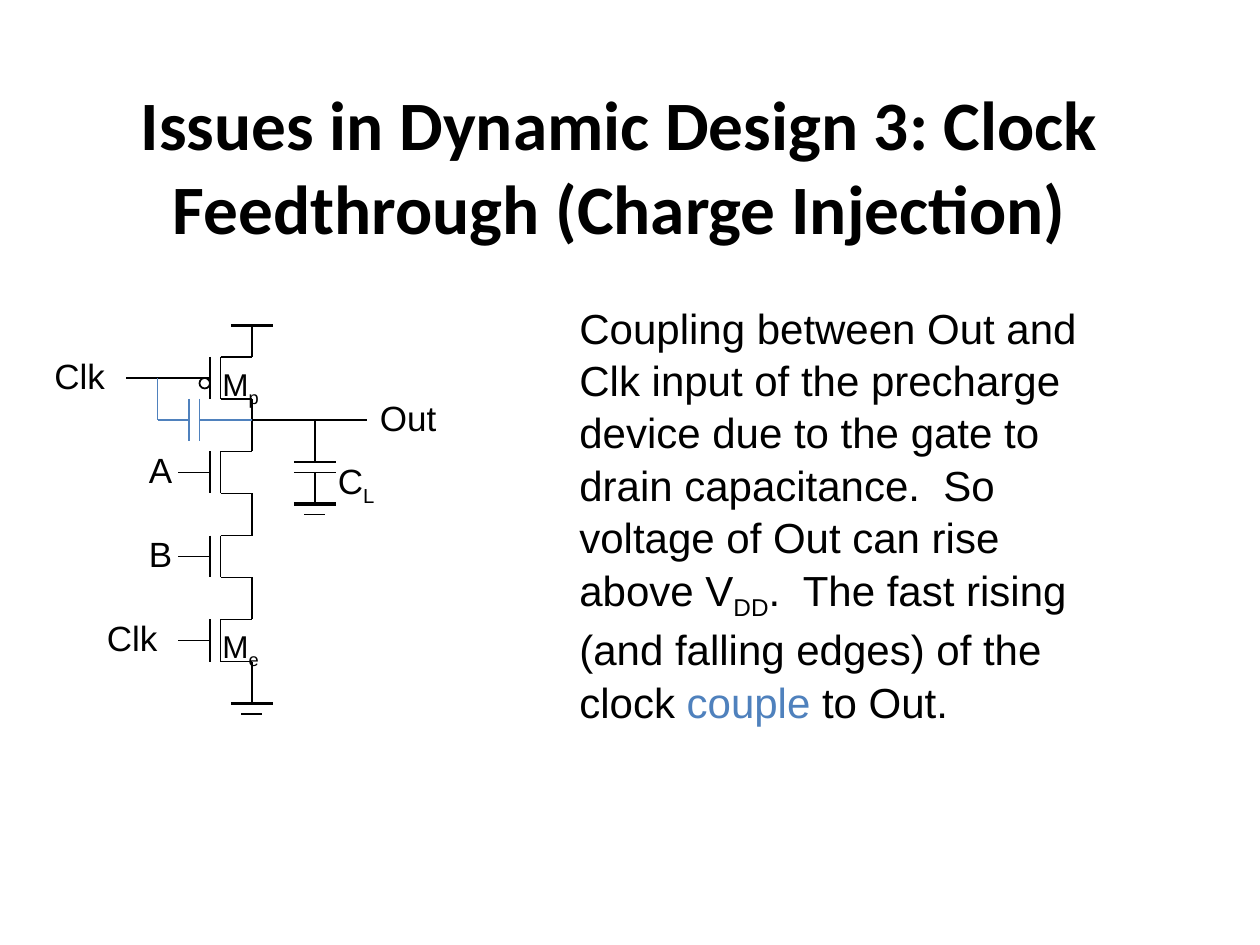
from dataclasses import dataclass

from lxml.etree import SubElement
from pptx import Presentation
from pptx.dml.color import RGBColor
from pptx.enum.shapes import MSO_CONNECTOR, MSO_SHAPE
from pptx.enum.text import MSO_ANCHOR, MSO_AUTO_SIZE, PP_ALIGN
from pptx.oxml.ns import qn
from pptx.util import Cm, Pt


@dataclass(frozen=True)
class Theme:
    ink: RGBColor = RGBColor(0x00, 0x00, 0x00)
    accent: RGBColor = RGBColor(0x4F, 0x81, 0xBD)
    title_font: str = "Calibri"
    text_font: str = "Arial"
    title_size: float = 39.6
    body_size: float = 24
    label_size: float = 20
    device_size: float = 18
    thin: float = 1
    heavy: float = 2.25
    line_spacing: float = 1.04


@dataclass(frozen=True)
class Box:
    left: float
    top: float
    width: float
    height: float

    def inner(self, left, top, width, height):
        return Box(self.left + left, self.top + top, width, height)


THEME = Theme()
GRID = 2.54 / 12  # centimetres in one step of the drawing grid


def grid(steps):
    return Cm(steps * GRID)


def add_wire(shapes, box, start, end, color=THEME.ink, weight=THEME.thin):
    """Draw a line between two grid points counted from the box corner."""
    wire = shapes.add_connector(
        MSO_CONNECTOR.STRAIGHT,
        grid(box.left + start[0]), grid(box.top + start[1]),
        grid(box.left + end[0]), grid(box.top + end[1]))
    wire.line.color.rgb = color
    wire.line.width = Pt(weight)
    SubElement(wire._element.spPr, qn("a:effectLst"))


def add_wires(shapes, box, ends, color=THEME.ink):
    for start, end in ends:
        add_wire(shapes, box, start, end, color)


def add_text_frame(shapes, box, wrap):
    frame = shapes.add_textbox(grid(box.left), grid(box.top),
                               grid(box.width), grid(box.height)).text_frame
    frame.word_wrap = wrap
    return frame


def add_span(para, text, size, font=THEME.text_font, color=THEME.ink, subscript=False):
    span = para.add_run()
    span.text = text
    span.font.size = Pt(size)
    span.font.name = font
    span.font.color.rgb = color
    if subscript:
        span.font._element.set("baseline", "-25000")
    return span


def add_label(shapes, box, text, subscript="", size=THEME.label_size):
    frame = add_text_frame(shapes, box, wrap=False)
    frame.auto_size = MSO_AUTO_SIZE.SHAPE_TO_FIT_TEXT
    para = frame.paragraphs[0]
    para.line_spacing = THEME.line_spacing
    add_span(para, text, size)
    if subscript:
        add_span(para, subscript, size, subscript=True)


def add_title(page, box):
    frame = add_text_frame(page.shapes, box, wrap=True)
    frame.vertical_anchor = MSO_ANCHOR.MIDDLE
    para = frame.paragraphs[0]
    para.alignment = PP_ALIGN.CENTER
    span = add_span(para, "Issues in Dynamic Design 3: Clock Feedthrough (Charge Injection)",
                    THEME.title_size, THEME.title_font)
    span.font.bold = True


def add_explanation(page, box):
    frame = add_text_frame(page.shapes, box, wrap=True)
    frame.auto_size = MSO_AUTO_SIZE.SHAPE_TO_FIT_TEXT
    para = frame.paragraphs[0]
    para.line_spacing = THEME.line_spacing
    size = THEME.body_size
    add_span(para, "Coupling between Out and Clk input of the precharge device due to "
                   "the gate to drain capacitance.  So voltage of Out can rise above V", size)
    add_span(para, "DD", size, subscript=True)
    add_span(para, ".  The fast rising (and falling edges) of the clock ", size)
    add_span(para, "couple", size, color=THEME.accent)
    add_span(para, " to Out.", size)


def add_transistor(page, box, inverted):
    """Draw a device with its gate on the left and its channel on the right edge."""
    shapes = page.shapes.add_group_shape().shapes
    add_wires(shapes, box, [
        ((4, 3), (7, 3)), ((4, 3), (4, 7)), ((4, 7), (7, 7)),
        ((3, 3), (3, 7)), ((0, 5), (3, 5)),
        ((7, 0), (7, 3)), ((7, 7), (7, 10)),
    ])
    if inverted:
        bubble = shapes.add_shape(MSO_SHAPE.OVAL, grid(box.left + 2), grid(box.top + 5),
                                  grid(1), grid(1))
        bubble.shadow.inherit = False
        bubble.fill.background()
        bubble.line.color.rgb = THEME.ink
        bubble.line.width = Pt(THEME.thin)


def add_ground(shapes, box):
    add_wire(shapes, box, (0, 3), (4, 3), weight=THEME.heavy)
    add_wires(shapes, box, [((1, 4), (3, 4)), ((2, 0), (2, 3))])


def add_load(page, box):
    shapes = page.shapes.add_group_shape().shapes
    add_wires(shapes, box, [((2, 0), (2, 4)), ((0, 4), (4, 4)), ((0, 5), (4, 5))])
    add_ground(shapes, box.inner(0, 5, 4, 4))
    add_label(shapes, box.inner(3, 3, 6, 5.2), "C", "L")


def add_coupling(page, box):
    """Draw the parasitic capacitor between clock and output."""
    shapes = page.shapes.add_group_shape().shapes
    add_wires(shapes, box, [
        ((0, 0), (0, 4)), ((0, 4), (3, 4)),
        ((3, 2), (3, 6)), ((4, 2), (4, 6)), ((4, 4), (9, 4)),
    ], THEME.accent)


def add_circuit(page, box):
    # Top of the device, input name, left and width of that name, device subscript
    stages = [(0, "Clk", 0, 7.2, "p"), (9, "A", 9, 4.7, ""),
              (17, "B", 9, 4.7, ""), (25, "Clk", 5, 7.2, "e")]
    for top, name, name_left, name_width, device in stages:
        add_transistor(page, box.inner(13, top, 7, 10), inverted=device == "p")
        add_label(page.shapes, box.inner(name_left, top + 2, name_width, 5.2), name)
        if device:
            add_label(page.shapes, box.inner(16, top + 3, 6, 4.8), "M", device,
                      THEME.device_size)
    add_load(page, box.inner(24, 9, 4, 9))
    add_ground(page.shapes.add_group_shape().shapes, box.inner(18, 33, 4, 4))
    add_wire(page.shapes, box, (18, 0), (22, 0), weight=THEME.heavy)
    add_wires(page.shapes, box, [((20, 9), (31, 9)), ((8, 5), (13, 5))])
    add_label(page.shapes, box.inner(31, 6, 7.8, 5.2), "Out")
    add_coupling(page, box.inner(11, 5, 9, 6))


def main():
    deck = Presentation()
    deck.slide_width, deck.slide_height = Cm(25.4), Cm(19.05)
    page = deck.slides.add_slide(deck.slide_layouts[6])
    add_title(page, Box(8, 11, 102, 9.4))
    add_circuit(page, Box(4, 31, 39, 37))
    add_explanation(page, Box(54, 28, 54, 40))
    deck.save("out.pptx")


if __name__ == "__main__":
    main()
